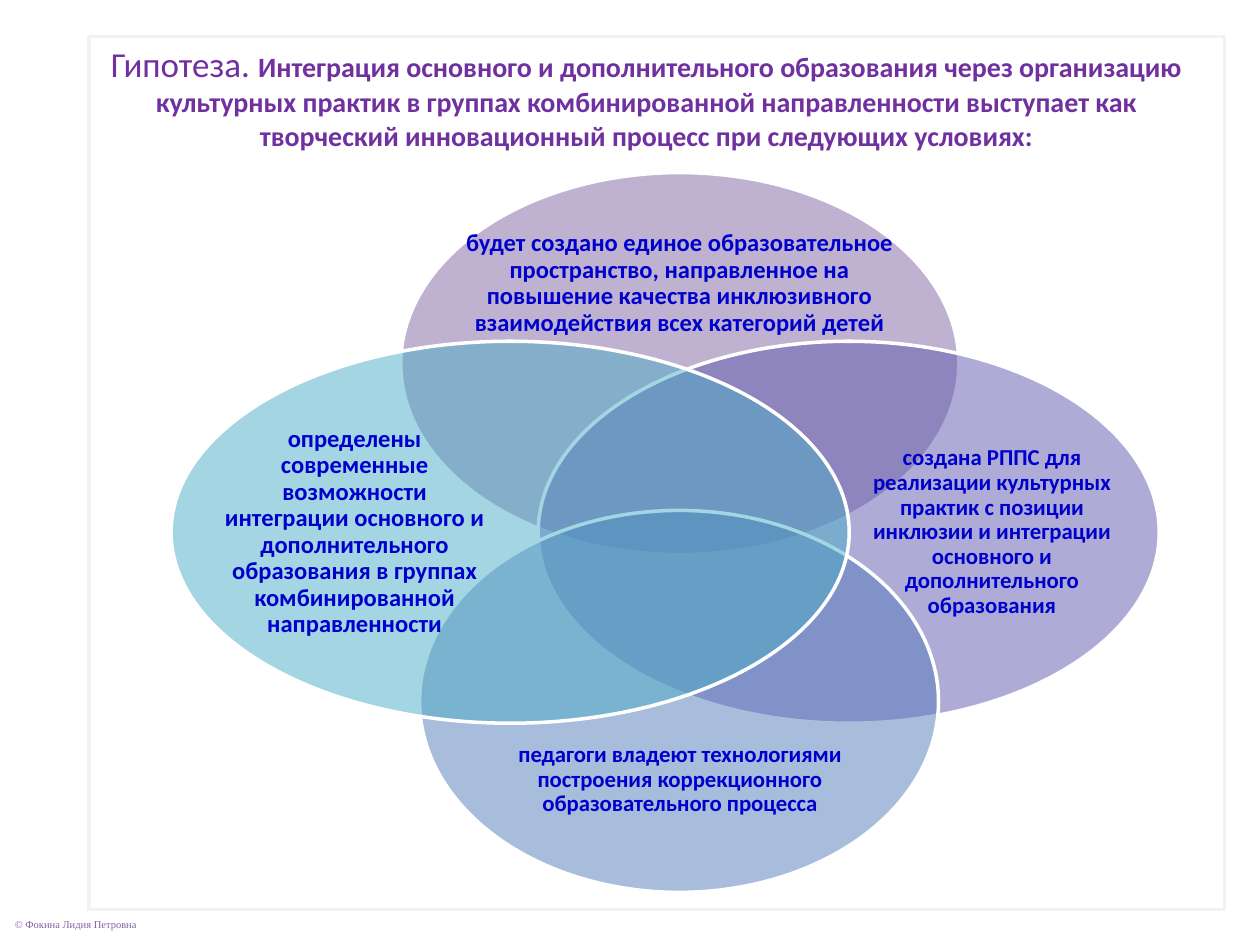
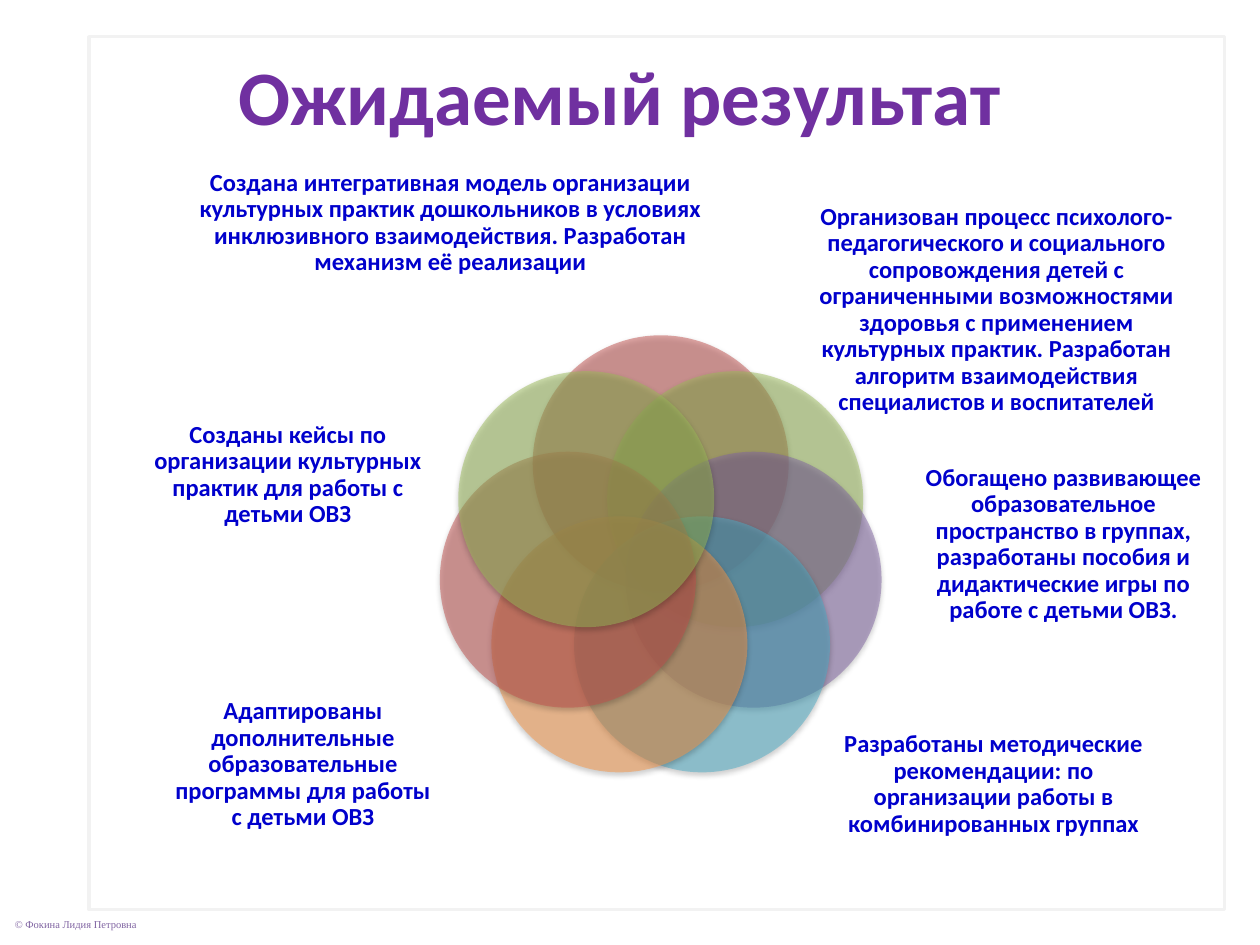
"""Builds two slides: a hypothesis with four conditions and the seven-circle expected result."""
import math

from lxml import etree
from pptx import Presentation
from pptx import util as u
from pptx.dml import color as dml
from pptx.enum import shapes, text as t
from pptx.oxml import ns

PURPLE = "7030A0"
BLUE = "0000CC"
WHITE = "FFFFFF"
RED, GREEN, VIOLET, TEAL, ORANGE = "C0504D", "9BBB59", "8064A2", "4BACC6", "F79646"


def paint(fill, color, opacity=100):
    """Give a fill a solid colour with an opacity in percent."""
    fill.solid()
    fill.fore_color.rgb = dml.RGBColor.from_string(color)
    if opacity < 100:
        rgb = fill._xPr.find(".//" + ns.qn("a:srgbClr"))
        etree.SubElement(rgb, ns.qn("a:alpha"), val=str(opacity * 1000))


def write(page, area, text, size=14, color=BLUE, bold=True, font="Calibri", lead="",
          lead_size=20, spacing=0.9, align=t.PP_ALIGN.CENTER, anchor=t.MSO_ANCHOR.MIDDLE):
    """Add a text box without margins, with an optional plain lead before the text."""
    frame = page.shapes.add_textbox(*map(u.Cm, area)).text_frame
    frame.margin_left = frame.margin_right = frame.margin_top = frame.margin_bottom = 0
    frame.word_wrap = True
    frame.vertical_anchor = anchor
    para = frame.paragraphs[0]
    para.alignment = align
    para.line_spacing = spacing
    for words, points, weight in ((lead, lead_size, False), (text, size, bold)):
        if words:
            span = para.add_run()
            span.text = words
            span.font.size = u.Pt(points)
            span.font.bold = weight
            span.font.name = font
            paint(span.font.fill, color)


conditions = [
    ((8.08, 3.48, 11.25, 7.7), VIOLET, (9.37, 4.5, 8.66, 2.44), 14,
     "будет создано единое образовательное пространство, направленное на "
     "повышение качества инклюзивного взаимодействия всех категорий детей"),
    ((10.85, 6.88, 12.52, 7.7), "5F5BAE", (17.58, 7.77, 4.83, 5.92), 13,
     "создана РППС для реализации культурных практик с позиции инклюзии и "
     "интеграции основного и дополнительного образования"),
    ((8.46, 10.29, 10.46, 7.7), "537ABA", (9.68, 14.5, 8.05, 2.44), 13,
     "педагоги владеют технологиями построения коррекционного образовательного процесса"),
    ((3.45, 6.88, 13.67, 7.7), TEAL, (4.52, 7.77, 5.26, 5.92), 14,
     "определены современные возможности интеграции основного и дополнительного "
     "образования в группах комбинированной направленности"),
]

results = [
    (RED, (3.91, 2.92, 10.34, 3.15),
     "Создана интегративная модель организации культурных практик дошкольников в "
     "условиях инклюзивного взаимодействия. Разработан механизм её реализации"),
    (GREEN, (16.1, 3.99, 7.98, 4.52),
     "Организован процесс психолого- педагогического и социального сопровождения "
     "детей с ограниченными возможностями здоровья с применением культурных практик. "
     "Разработан алгоритм взаимодействия специалистов и воспитателей"),
    (VIOLET, (18.29, 9.12, 6.3, 3.71),
     "Обогащено развивающее образовательное пространство в группах, разработаны "
     "пособия и дидактические игры по работе с детьми ОВЗ."),
    (TEAL, (16.69, 14.12, 6.68, 3.4),
     "Разработаны методические рекомендации: по организации работы в комбинированных группах"),
    (ORANGE, (3.47, 13.72, 5.28, 3.4),
     "Адаптированы дополнительные образовательные программы для работы с детьми ОВЗ"),
    (RED, (3.06, 7.72, 5.49, 3.71),
     "Созданы кейсы по организации культурных практик для работы с детьми ОВЗ"),
    (GREEN, None, ""),
]

ring_x, ring_y, ring_radius, diameter = 13.32, 11.26, 1.92, 5.16
result_circles = []
for index, (color, label_area, label) in enumerate(results):
    angle = 2 * math.pi * index / len(results)
    left = ring_x + ring_radius * math.sin(angle) - diameter / 2
    top = ring_y - ring_radius * math.cos(angle) - diameter / 2
    result_circles.append(((left, top, diameter, diameter), color, label_area, 14, label))

hypothesis_title = {
    "area": (1.96, 0.86, 22.15, 2.2), "size": 16, "lead": "Гипотеза. ",
    "text": "Интеграция основного и дополнительного образования через организацию "
            "культурных практик в группах комбинированной направленности выступает как "
            "творческий инновационный процесс при следующих условиях:",
}
result_title = {"area": (1.32, 0.97, 22.35, 1.9), "size": 44, "text": "Ожидаемый результат"}

deck = Presentation()
deck.slide_width, deck.slide_height = u.Cm(25.4), u.Cm(19.05)

for title, circles, outlined in (
    (hypothesis_title, conditions, True),
    (result_title, result_circles, False),
):
    page = deck.slides.add_slide(deck.slide_layouts[6])
    paint(page.background.fill, WHITE)

    border = page.shapes.add_shape(
        shapes.MSO_SHAPE.RECTANGLE, *map(u.Cm, (1.8, 0.74, 22.89, 17.6)))
    border.shadow.inherit = False
    paint(border.fill, WHITE, 70)
    paint(border.line.fill, "F2F2F2")
    border.line.width = u.Pt(2)
    write(page, (0.3, 18.39, 4, 0.5), "© Фокина Лидия Петровна", size=6, color=VIOLET,
          bold=False, font="Times New Roman", spacing=1, align=t.PP_ALIGN.LEFT)
    write(page, color=PURPLE, spacing=1, anchor=t.MSO_ANCHOR.TOP, **title)

    for circle_area, color, label_area, size, label in circles:
        circle = page.shapes.add_shape(shapes.MSO_SHAPE.OVAL, *map(u.Cm, circle_area))
        circle.shadow.inherit = False
        paint(circle.fill, color, 50)
        if outlined:
            paint(circle.line.fill, WHITE)
            circle.line.width = u.Pt(2)
        else:
            circle.line.fill.background()
            effects = circle._element.spPr.find(ns.qn("a:effectLst"))
            shadow = etree.SubElement(
                effects, ns.qn("a:outerShdw"), blurRad=str(u.Pt(3.1)), dist=str(u.Pt(1.6)),
                dir="5400000", rotWithShape="0")
            black = etree.SubElement(shadow, ns.qn("a:srgbClr"), val="000000")
            etree.SubElement(black, ns.qn("a:alpha"), val="38000")
        if label:
            write(page, label_area, label, size=size)

deck.save("out.pptx")
